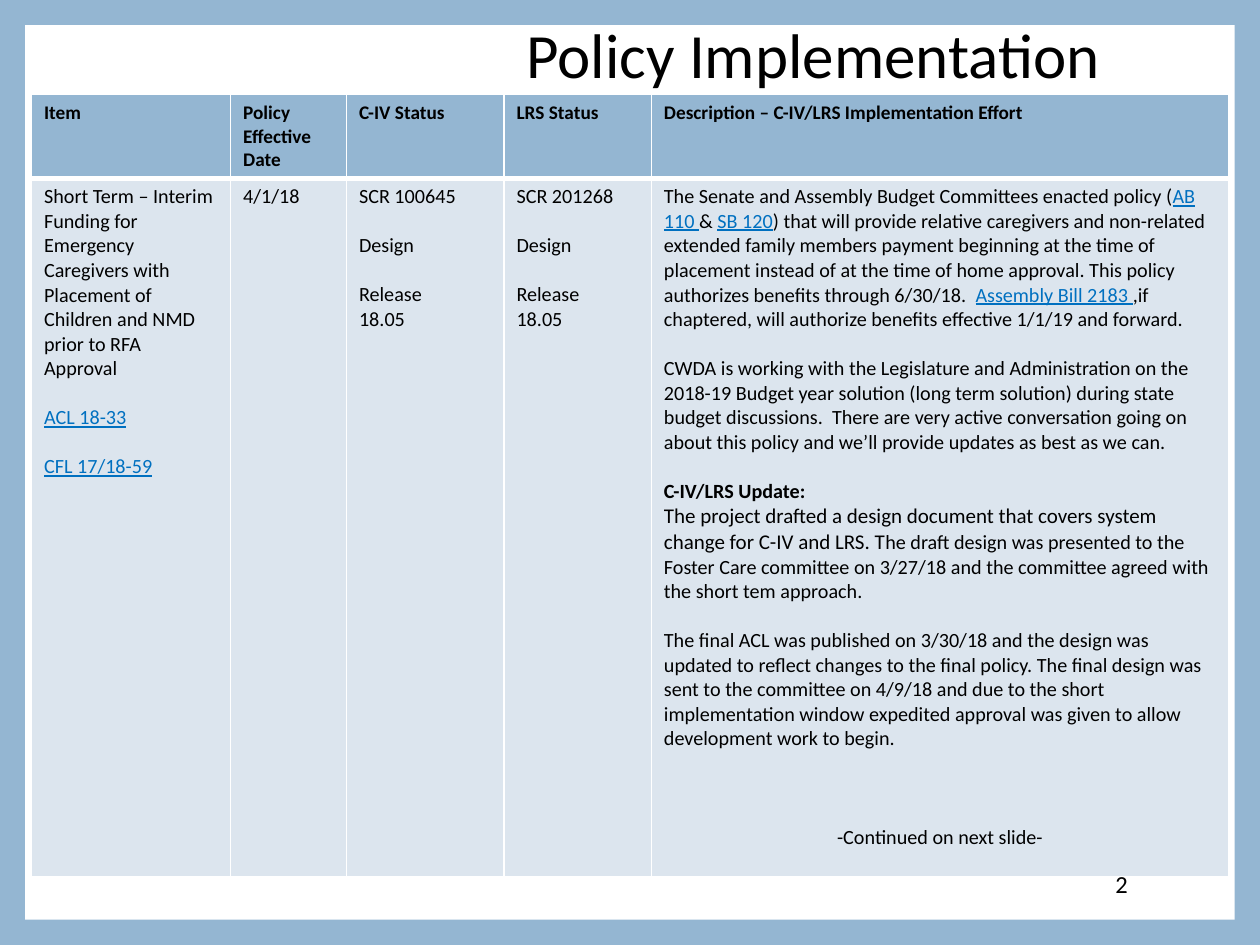
from lxml.etree import SubElement
from pptx import Presentation
from pptx.dml.color import RGBColor
from pptx.enum.shapes import MSO_SHAPE as Shape
from pptx.enum.text import MSO_ANCHOR as Anchor, MSO_AUTO_SIZE as AutoSize, PP_ALIGN as Align
from pptx.oxml.ns import qn
from pptx.util import Inches, Pt

THEME = {
    "font": "Calibri",
    "blue": "94B6D2", "pale": "DCE5EE", "white": "FFFFFF", "text": "000000", "link": "0070C0",
    "title": 36, "number": 14, "header": 11, "body": 11.5, "large": 12, "line_gap": 14,
}

TITLE = "Policy Implementation"
PAGE = "2"
COLUMNS = [
    ("Item", 1.58),
    ("Policy Effective Date", 0.92),
    ("C-IV Status", 1.25),
    ("LRS Status", 1.17),
    ("Description – C-IV/LRS Implementation Effort", 4.58),
]
ROW_HEIGHTS = [0.63, 5.54]


def status(request):
    return [(0, [(request, "body")]), (1, [("Design", "body")]),
            (1, [("Release", "body")]), (0, [("18.05", "body")])]


# Each paragraph is (blank lines above, runs); each run is (text, style).
BODY = [
    [
        (0, [("Short Term – Interim Funding for Emergency Caregivers with Placement of "
              "Children and NMD prior to RFA Approval", "body")]),
        (1, [("ACL 18-33", "link")]),
        (1, [("CFL 17/18-59", "link")]),
    ],
    [(0, [("4/1/18", "body")])],
    status("SCR 100645"),
    status("SCR 201268"),
    [
        (0, [("The Senate and Assembly Budget Committees enacted policy (", "body"),
             ("AB 110 ", "link"), ("& ", "body"), ("SB 120", "link"),
             (") that will provide relative caregivers and non-related extended family members "
              "payment beginning at the time of placement instead of at the time of home approval. "
              "This policy authorizes benefits through 6/30/18.  ", "body"),
             ("Assembly Bill 2183 ", "link"),
             (",if chaptered, will authorize benefits effective 1/1/19 and forward.", "body")]),
        (1, [("CWDA is working with the Legislature and Administration on the 2018-19 Budget year "
              "solution (long term solution) during state budget discussions.  There are very "
              "active conversation going on about this policy and we’ll provide updates as best "
              "as we can.", "body")]),
        (1, [("C-IV/LRS Update:", "bold")]),
        (0, [("The project drafted a design document that covers system change for C-IV and "
              "LRS. T", "large"),
             ("he draft design was presented to the Foster Care committee on 3/27/18 and the "
              "committee agreed with the short tem approach.", "body")]),
        (1, [("The final ACL was published on 3/30/18 and the design was updated to reflect changes "
              "to the final policy. The final design was sent to the committee on 4/9/18 and due to "
              "the short implementation window expedited approval was given to allow development "
              "work to begin.", "body")]),
        (3, [("-Continued on next slide-", "body")]),
    ],
]


def color(name):
    return RGBColor.from_string(THEME[name])


def style_font(font, size, bold=False):
    font.name = THEME["font"]
    font.size = Pt(THEME[size])
    font.bold = bold
    font.color.rgb = color("text")


def place(shape, left, top, width, height):
    shape.left, shape.top = Inches(left), Inches(top)
    shape.width, shape.height = Inches(width), Inches(height)


def write_line(frame, text, size):
    frame.word_wrap = True
    frame.auto_size = AutoSize.NONE
    frame.vertical_anchor = Anchor.MIDDLE
    paragraph = frame.paragraphs[0]
    paragraph.text = text
    paragraph.alignment = Align.RIGHT
    style_font(paragraph.font, size)
    return paragraph


def write_cell(cell, paragraphs):
    frame = cell.text_frame
    for index, (gap, runs) in enumerate(paragraphs):
        paragraph = frame.add_paragraph() if index else frame.paragraphs[0]
        paragraph.space_before = Pt(gap * THEME["line_gap"])
        style_font(paragraph.font, "body")
        for text, style in runs:
            run = paragraph.add_run()
            run.text = text
            style_font(run.font, style if style in ("header", "large") else "body",
                       style in ("header", "bold"))
            if style == "link":
                run.font.color.rgb = color("link")
                run.font.underline = True


def paint_cell(cell, fill, top, bottom):
    cell.fill.solid()
    cell.fill.fore_color.rgb = color(fill)
    properties = cell._tc.get_or_add_tcPr()
    edges = [("L", 1), ("R", 1), ("T", top), ("B", bottom)]
    for index, (side, width) in enumerate(edges):
        line = SubElement(properties, qn("a:ln" + side), w=str(Pt(width)))
        solid = SubElement(line, qn("a:solidFill"))
        SubElement(solid, qn("a:srgbClr"), val=THEME["white"])
        properties.insert(index, line)


presentation = Presentation()
presentation.slide_width, presentation.slide_height = Inches(10), Inches(7.5)
slide = presentation.slides.add_slide(presentation.slide_layouts[5])
slide.background.fill.solid()
slide.background.fill.fore_color.rgb = color("blue")

title = slide.shapes.title
place(title, 0.5, 0.17, 8.33, 0.58)
write_line(title.text_frame, TITLE, "title").line_spacing = 0.9

margin = 0.2
panel = slide.shapes.add_shape(Shape.RECTANGLE, Inches(margin), Inches(margin),
                               Inches(10 - 2 * margin), Inches(7.5 - 2 * margin))
panel.shadow.inherit = False
panel.fill.solid()
panel.fill.fore_color.rgb = color("white")
panel.line.fill.background()
title._element.addprevious(panel._element)

number = slide.shapes.add_textbox(Inches(7.65), Inches(6.81), Inches(1.4), Inches(0.4))
write_line(number.text_frame, PAGE, "number")

table = slide.shapes.add_table(2, len(COLUMNS), Inches(0.25), Inches(0.75),
                               Inches(9.5), Inches(sum(ROW_HEIGHTS))).table
for row, height in zip(table.rows, ROW_HEIGHTS):
    row.height = Inches(height)
for index, (heading, width) in enumerate(COLUMNS):
    table.columns[index].width = Inches(width)
    header, body = table.cell(0, index), table.cell(1, index)
    write_cell(header, [(0, [(heading, "header")])])
    write_cell(body, BODY[index])
    paint_cell(header, "blue", 1, 3)
    paint_cell(body, "pale", 3, 1)
table.cell(1, len(COLUMNS) - 1).text_frame.paragraphs[-1].alignment = Align.CENTER

presentation.save("out.pptx")
